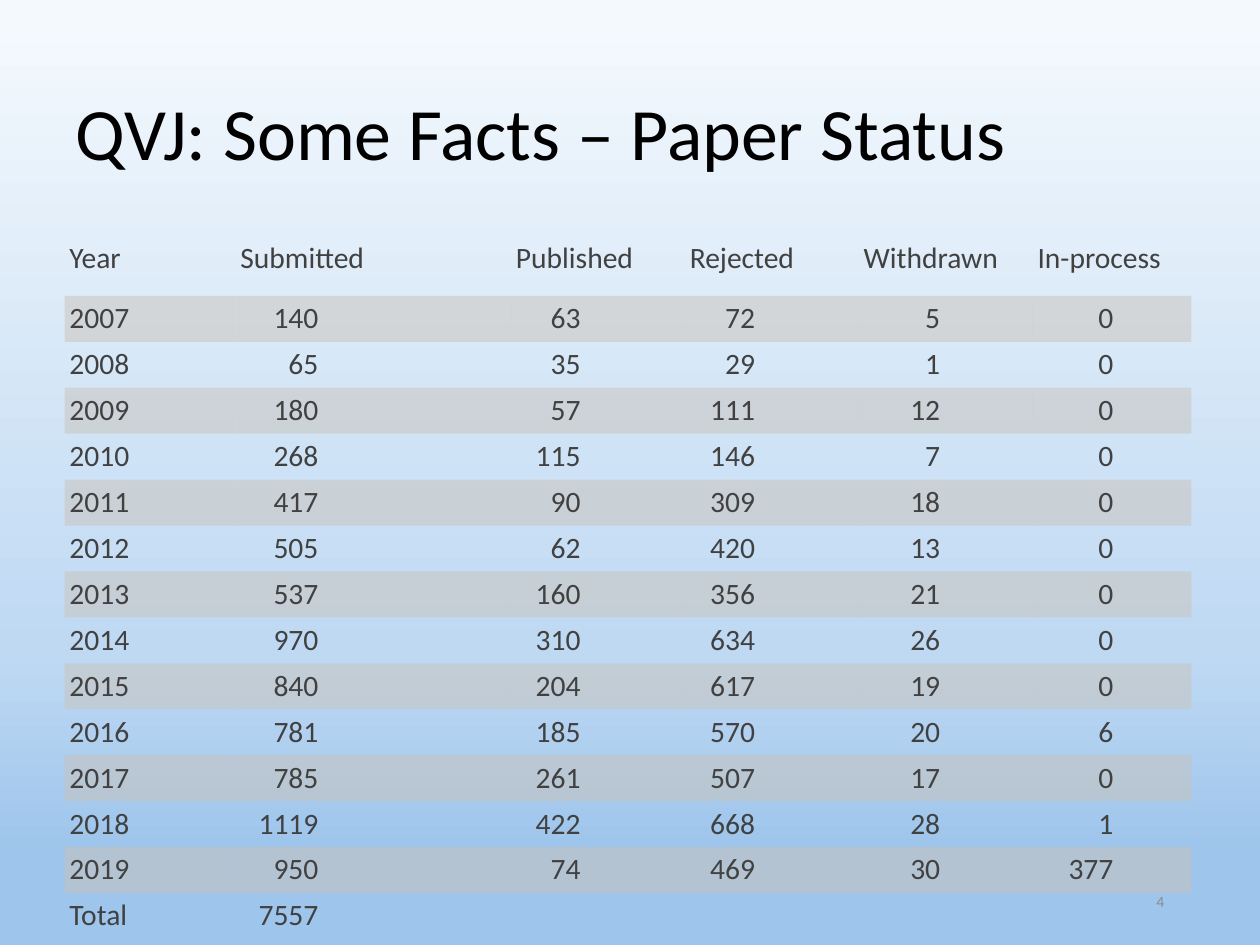
"""Build the slide of paper counts by year and status."""
from dataclasses import dataclass
from typing import NamedTuple

from lxml.etree import SubElement
from pptx import Presentation
from pptx.dml.color import RGBColor
from pptx.enum.text import MSO_ANCHOR as Anchor, MSO_AUTO_SIZE as AutoSize, PP_ALIGN as Align
from pptx.oxml.ns import qn
from pptx.slide import Slide
from pptx.table import _Cell as Cell
from pptx.text.text import _Paragraph as Paragraph
from pptx.util import Inches, Pt

SLIDE_WIDTH, SLIDE_HEIGHT = Inches(14.22), Inches(10.67)
NO_GRID_STYLE = "{2D5ABB26-0587-4C30-8999-92F81FD0307C}"


@dataclass(frozen=True)
class Theme:
    font: str = "Calibri"
    title_color: str = "000000"
    table_color: str = "414141"
    number_color: str = "8C8C8C"
    band_color: str = "C9C3BA"
    band_opacity: int = 50
    title_size: float = 60
    table_size: float = 24
    number_size: float = 12.8
    sky: tuple = ((2, "F4F9FD"), (69, "BFD9F3"), (90, "9EC5EC"), (100, "9EC5EC"))


class Box(NamedTuple):
    left: float
    top: float
    width: float
    height: float


class Column(NamedTuple):
    heading: str
    width: float
    right_margin: float
    values: tuple


THEME = Theme()
TITLE_BOX = Box(0, 8.25, 100, 12.46)
TITLE_INDENT = 6
NUMBER_BOX = Box(70.6, 92.69, 22.5, 5.34)
HEADING_HEIGHT, ROW_HEIGHT, CELL_INSET = 7.97, 4.86, 0.38
COLUMNS = (
    Column("Year", 13.57, 0, (*range(2007, 2020), "Total")),
    Column("Submitted", 21.87, 15.3,
           (140, 65, 180, 268, 417, 505, 537, 970, 840, 781, 785, 1119, 950, 7557)),
    Column("Published", 13.8, 8.3,
           (63, 35, 57, 115, 90, 62, 160, 310, 204, 185, 261, 422, 74, "")),
    Column("Rejected", 13.8, 8.25,
           (72, 29, 111, 146, 309, 420, 356, 634, 617, 570, 507, 668, 469, "")),
    Column("Withdrawn", 13.8, 7.35,
           (5, 1, 12, 7, 18, 13, 21, 26, 19, 20, 17, 28, 30, "")),
    Column("In-process", 12.6, 6.2,
           (0, 0, 0, 0, 0, 0, 0, 0, 0, 6, 0, 1, 377, "")),
)
ROW_COUNT = len(COLUMNS[0].values)
TABLE_BOX = Box(5.13, 23.34, sum(column.width for column in COLUMNS),
                HEADING_HEIGHT + ROW_COUNT * ROW_HEIGHT)


def across(percent: float) -> int:
    """Return a share of the slide's width."""
    return round(SLIDE_WIDTH * percent / 100)


def down(percent: float) -> int:
    """Return a share of the slide's height."""
    return round(SLIDE_HEIGHT * percent / 100)


def place(box: Box) -> tuple:
    """Return a box as left, top, width and height."""
    return across(box.left), down(box.top), across(box.width), down(box.height)


def write(paragraph: Paragraph, text: str, size: float, color: str, align: Align) -> None:
    """Add one formatted run to a paragraph."""
    paragraph.alignment = align
    run = paragraph.add_run()
    run.text = text
    run.font.name = THEME.font
    run.font.size = Pt(size)
    run.font.color.rgb = RGBColor.from_string(color)


def paint_background(slide: Slide) -> None:
    """Fill the background with the vertical sky gradient."""
    fill = slide.background.fill
    fill.gradient()
    fill.gradient_angle = 270
    stops = slide.element.find(".//" + qn("a:gsLst"))
    for stop in list(stops):
        stops.remove(stop)
    for position, color in THEME.sky:
        stop = SubElement(stops, qn("a:gs"), pos=str(position * 1000))
        SubElement(stop, qn("a:srgbClr"), val=color)


def add_title(slide: Slide) -> None:
    """Place and write the title."""
    title = slide.shapes.title
    title.left, title.top, title.width, title.height = place(TITLE_BOX)
    frame = title.text_frame
    frame.auto_size = AutoSize.NONE
    frame.vertical_anchor = Anchor.MIDDLE
    frame.margin_left = across(TITLE_INDENT)
    paragraph = frame.paragraphs[0]
    paragraph.line_spacing = 0.9
    write(paragraph, "QVJ: Some Facts – Paper Status",
          THEME.title_size, THEME.title_color, Align.LEFT)


def fill_cell(cell: Cell, text: str, right_margin: float, banded: bool) -> None:
    """Write one table cell, set right when it has a right margin."""
    cell.vertical_anchor = Anchor.MIDDLE
    cell.margin_left = cell.margin_top = cell.margin_bottom = across(CELL_INSET)
    cell.margin_right = across(right_margin or CELL_INSET)
    write(cell.text_frame.paragraphs[0], text, THEME.table_size, THEME.table_color,
          Align.RIGHT if right_margin else Align.LEFT)
    if not banded:
        cell.fill.background()
        return
    cell.fill.solid()
    cell.fill.fore_color.rgb = RGBColor.from_string(THEME.band_color)
    color = cell._tc.tcPr.find(".//" + qn("a:srgbClr"))
    SubElement(color, qn("a:alpha"), val=str(THEME.band_opacity * 1000))


def add_status_table(slide: Slide) -> None:
    """Add the table of paper counts."""
    frame = slide.shapes.add_table(ROW_COUNT + 1, len(COLUMNS), *place(TABLE_BOX))
    table = frame.table
    table.first_row = table.horz_banding = False
    table._tbl.find(".//" + qn("a:tableStyleId")).text = NO_GRID_STYLE
    for index, row in enumerate(table.rows):
        row.height = down(ROW_HEIGHT if index else HEADING_HEIGHT)
    for index, column in enumerate(COLUMNS):
        table.columns[index].width = across(column.width)
        fill_cell(table.cell(0, index), column.heading, 0, False)
        for row, value in enumerate(column.values, start=1):
            fill_cell(table.cell(row, index), str(value), column.right_margin, row % 2 == 1)


def add_slide_number(slide: Slide) -> None:
    """Add the slide number at the lower right."""
    frame = slide.shapes.add_textbox(*place(NUMBER_BOX)).text_frame
    frame.word_wrap = True
    frame.vertical_anchor = Anchor.MIDDLE
    write(frame.paragraphs[0], "4", THEME.number_size, THEME.number_color, Align.RIGHT)


def main() -> None:
    """Build and save the presentation."""
    presentation = Presentation()
    presentation.slide_width, presentation.slide_height = SLIDE_WIDTH, SLIDE_HEIGHT
    slide = presentation.slides.add_slide(presentation.slide_layouts[5])
    paint_background(slide)
    add_title(slide)
    add_status_table(slide)
    add_slide_number(slide)
    presentation.save("out.pptx")


if __name__ == "__main__":
    main()
